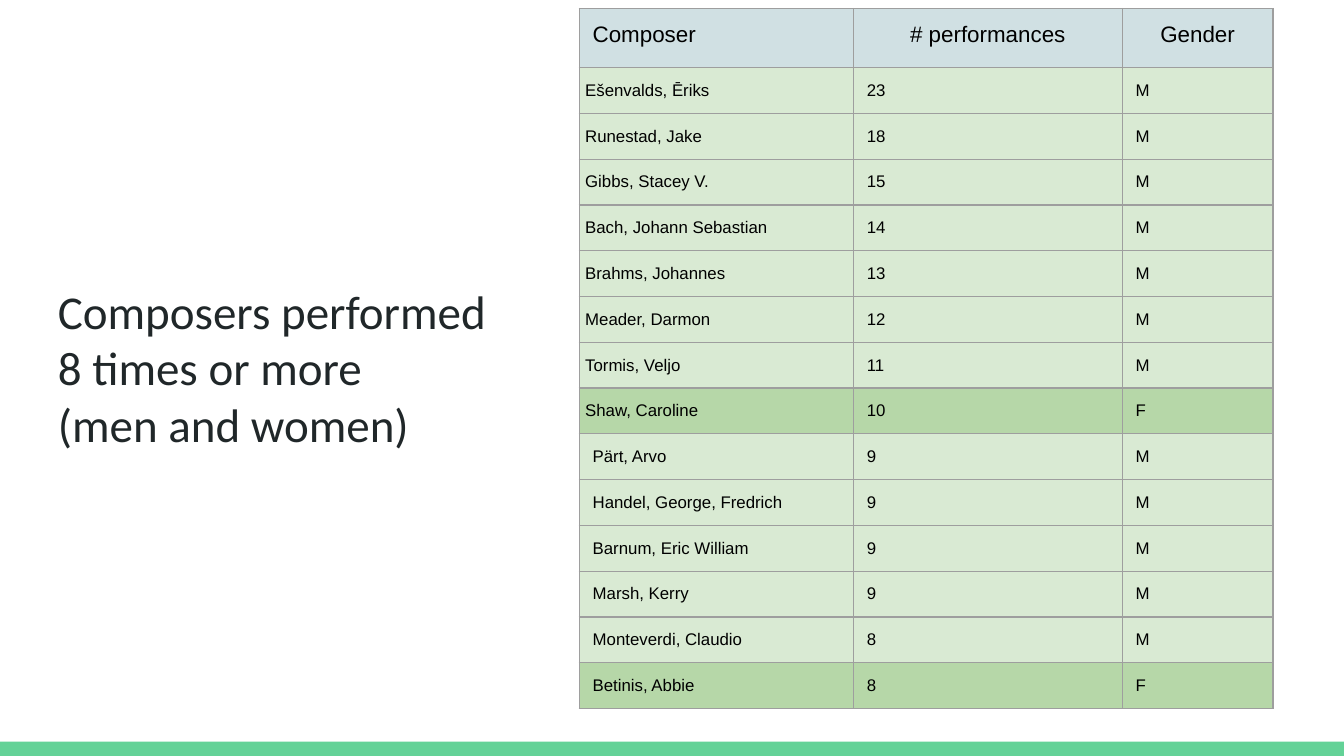
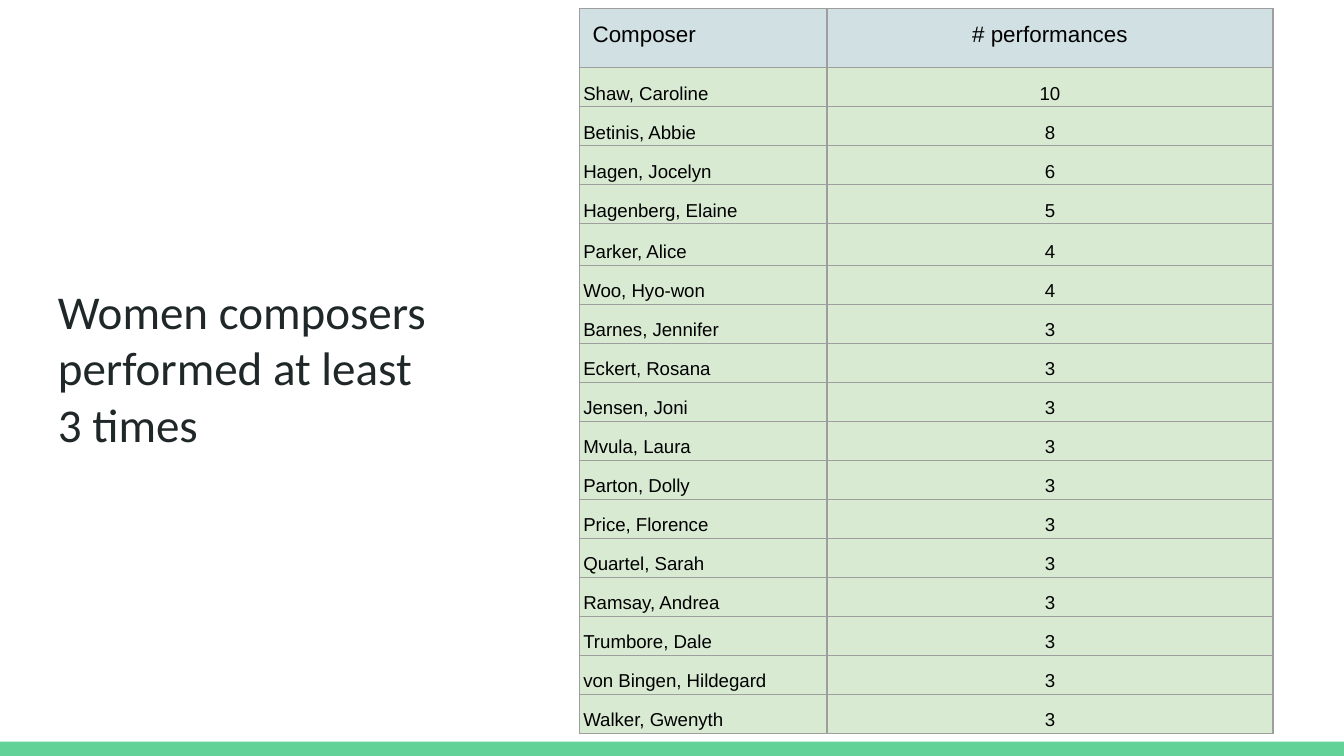
"""Builds two slides that rank composers by number of performances."""
from dataclasses import dataclass

from lxml import etree
from pptx import Presentation
from pptx.dml.color import RGBColor
from pptx.enum.shapes import MSO_SHAPE
from pptx.enum.text import MSO_ANCHOR, MSO_AUTO_SIZE, PP_ALIGN
from pptx.oxml.ns import qn
from pptx.util import Pt

RECTANGLE = MSO_SHAPE.RECTANGLE
TOP, BOTTOM = MSO_ANCHOR.TOP, MSO_ANCHOR.BOTTOM
LEFT, CENTER = PP_ALIGN.LEFT, PP_ALIGN.CENTER
NO_AUTOFIT = MSO_AUTO_SIZE.NONE

COLORS = {
    "band": "63D297",
    "title": "202729",
    "text": "000000",
    "border": "9E9E9E",
    "header": "D0E0E3",
    "row": "D9EAD3",
    "woman": "B6D7A8",
}
TITLE_FONT, TABLE_FONT = "Calibri", "Arial"
SLIDE_WIDTH, SLIDE_HEIGHT = 720, 405
BAND_HEIGHT = 7.6
TABLE_LEFT, TABLE_TOP = 310.3, 4.6
HEADER_HEIGHT, ROW_HEIGHT, TALL_ROW_HEIGHT = 31.7, 20.9, 22.3
TALL_ROW = 5
TITLE_ONLY_LAYOUT = 5


@dataclass(frozen=True)
class CellStyle:
    """Text size, placement and insets (left, top, right, bottom) of a cell."""

    size: float
    align: PP_ALIGN = LEFT
    anchor: MSO_ANCHOR = TOP
    insets: tuple[float, float, float, float] = (7.2, 7.2, 7.2, 7.2)
    line_spacing: float = 1.0


HEADER = CellStyle(12)
HEADER_CENTERED = CellStyle(12, CENTER)
PLAIN = CellStyle(9)
LEADER_NAME = CellStyle(9, anchor=BOTTOM, insets=(3.2, 0.7, 0.7, 7.2))
WOMAN_NAME = CellStyle(10, LEFT, BOTTOM, (2.2, 1.4, 2.2, 1.4), 1.15)
WOMAN_COUNT = CellStyle(10, CENTER, BOTTOM, (2.2, 1.4, 2.2, 1.4), 1.15)


@dataclass(frozen=True)
class Row:
    """One table row: its texts, cell styles and fill colour."""

    texts: tuple[str, ...]
    styles: tuple[CellStyle, ...]
    fill: str = "row"


@dataclass(frozen=True)
class Ranking:
    """One slide: its title, column widths and table rows."""

    title: str
    widths: tuple[float, ...]
    rows: list[Row]


TOP_COMPOSERS = [
    ("Ešenvalds, Ēriks", 23, "M"),
    ("Runestad, Jake", 18, "M"),
    ("Gibbs, Stacey V.", 15, "M"),
    ("Bach, Johann Sebastian", 14, "M"),
    ("Brahms, Johannes", 13, "M"),
    ("Meader, Darmon", 12, "M"),
    ("Tormis, Veljo", 11, "M"),
    ("Shaw, Caroline", 10, "F"),
    ("Pärt, Arvo", 9, "M"),
    ("Handel, George, Fredrich", 9, "M"),
    ("Barnum, Eric William", 9, "M"),
    ("Marsh, Kerry", 9, "M"),
    ("Monteverdi, Claudio", 8, "M"),
    ("Betinis, Abbie", 8, "F"),
]
WOMEN = [
    ("Shaw, Caroline", 10),
    ("Betinis, Abbie", 8),
    ("Hagen, Jocelyn", 6),
    ("Hagenberg, Elaine", 5),
    ("Parker, Alice", 4),
    ("Woo, Hyo-won", 4),
    ("Barnes, Jennifer", 3),
    ("Eckert, Rosana", 3),
    ("Jensen, Joni", 3),
    ("Mvula, Laura", 3),
    ("Parton, Dolly", 3),
    ("Price, Florence", 3),
    ("Quartel, Sarah", 3),
    ("Ramsay, Andrea", 3),
    ("Trumbore, Dale", 3),
    ("von Bingen, Hildegard", 3),
    ("Walker, Gwenyth", 3),
]


def header_row(*labels: str) -> Row:
    """Return a header whose first label is left-aligned and the rest centred."""
    return Row(labels, (HEADER,) + (HEADER_CENTERED,) * (len(labels) - 1), "header")


def leader_row(name: str, count: int, gender: str) -> Row:
    """Return a row of the overall ranking, darker for women."""
    name_style = LEADER_NAME if count > 9 else PLAIN
    fill = "woman" if gender == "F" else "row"
    return Row((name, str(count), gender), (name_style, PLAIN, PLAIN), fill)


RANKINGS = [
    Ranking(
        "Composers performed\n8 times or more\n(men and women)",
        (146.9, 144, 80.8),
        [header_row("Composer", "# performances", "Gender")]
        + [leader_row(*entry) for entry in TOP_COMPOSERS],
    ),
    Ranking(
        "Women composers\nperformed at least\n3 times",
        (132.7, 239),
        [header_row("Composer", "# performances")]
        + [Row((name, str(count)), (WOMAN_NAME, WOMAN_COUNT)) for name, count in WOMEN],
    ),
]


def rgb(key: str) -> RGBColor:
    """Return the named colour."""
    return RGBColor.from_string(COLORS[key])


def add_band(slide) -> None:
    """Draw the green band along the bottom edge."""
    band = slide.shapes.add_shape(
        RECTANGLE, 0, Pt(SLIDE_HEIGHT - BAND_HEIGHT), Pt(SLIDE_WIDTH), Pt(BAND_HEIGHT)
    )
    band.shadow.inherit = False
    band.fill.solid()
    band.fill.fore_color.rgb = rgb("band")
    band.line.fill.background()


def set_title(slide, text: str) -> None:
    """Place and format the slide title."""
    title = slide.shapes.title
    title.left, title.top, title.width, title.height = Pt(23.8), Pt(144), Pt(671), Pt(45.4)
    frame = title.text_frame
    frame.text = text
    frame.auto_size = NO_AUTOFIT
    frame.vertical_anchor = TOP
    frame.margin_left = frame.margin_top = frame.margin_right = frame.margin_bottom = Pt(7.2)
    for paragraph in frame.paragraphs:
        paragraph.alignment = LEFT
        paragraph.font.name = TITLE_FONT
        paragraph.font.size = Pt(25.2)
        paragraph.font.color.rgb = rgb("title")


def add_borders(cell) -> None:
    """Give a cell a thin grey line on all four sides."""
    properties = cell._tc.get_or_add_tcPr()
    for side in ("a:lnL", "a:lnR", "a:lnT", "a:lnB"):
        line = etree.SubElement(properties, qn(side), w=str(Pt(0.75)))
        fill = etree.SubElement(line, qn("a:solidFill"))
        etree.SubElement(fill, qn("a:srgbClr"), val=COLORS["border"])


def fill_cell(cell, text: str, style: CellStyle, fill: str) -> None:
    """Write and format one table cell."""
    add_borders(cell)
    cell.fill.solid()
    cell.fill.fore_color.rgb = rgb(fill)
    cell.vertical_anchor = style.anchor
    cell.margin_left, cell.margin_top, cell.margin_right, cell.margin_bottom = map(
        Pt, style.insets
    )
    cell.text = text
    paragraph = cell.text_frame.paragraphs[0]
    paragraph.alignment = style.align
    paragraph.line_spacing = style.line_spacing
    paragraph.font.name = TABLE_FONT
    paragraph.font.size = Pt(style.size)
    paragraph.font.bold = False
    paragraph.font.color.rgb = rgb("text")


def add_ranking_table(slide, ranking: Ranking) -> None:
    """Draw the table of composers."""
    heights = [HEADER_HEIGHT] + [ROW_HEIGHT] * (len(ranking.rows) - 1)
    heights[TALL_ROW] = TALL_ROW_HEIGHT
    table = slide.shapes.add_table(
        len(ranking.rows), len(ranking.widths), Pt(TABLE_LEFT), Pt(TABLE_TOP),
        Pt(sum(ranking.widths)), Pt(sum(heights)),
    ).table
    table.horz_banding = False
    for column, width in zip(table.columns, ranking.widths):
        column.width = Pt(width)
    for table_row, height, row in zip(table.rows, heights, ranking.rows):
        table_row.height = Pt(height)
        for cell, text, style in zip(table_row.cells, row.texts, row.styles):
            fill_cell(cell, text, style, row.fill)


def main() -> None:
    """Build and save the presentation."""
    presentation = Presentation()
    presentation.slide_width, presentation.slide_height = Pt(SLIDE_WIDTH), Pt(SLIDE_HEIGHT)
    for ranking in RANKINGS:
        slide = presentation.slides.add_slide(presentation.slide_layouts[TITLE_ONLY_LAYOUT])
        add_band(slide)
        set_title(slide, ranking.title)
        add_ranking_table(slide, ranking)
    presentation.save("out.pptx")


if __name__ == "__main__":
    main()
